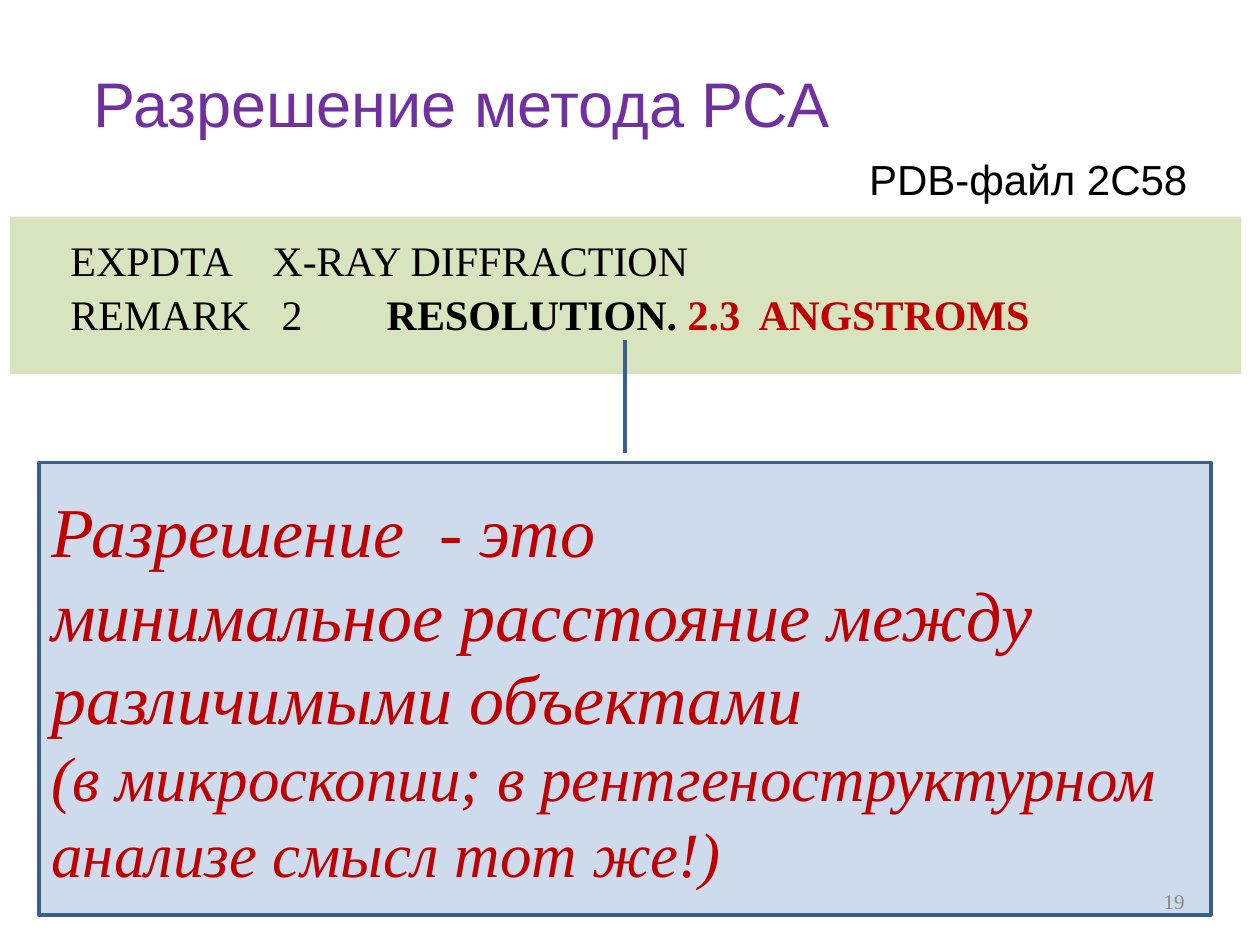
"""Build a slide that defines resolution in X-ray structure analysis."""
from lxml import etree
from pptx import Presentation
from pptx.dml.color import RGBColor
from pptx.enum.shapes import MSO_SHAPE
from pptx.enum.text import MSO_ANCHOR, PP_ALIGN
from pptx.oxml.ns import qn
from pptx.util import Inches, Pt

RECTANGLE, CALLOUT = MSO_SHAPE.RECTANGLE, MSO_SHAPE.LINE_CALLOUT_1
TOP, MIDDLE = MSO_ANCHOR.TOP, MSO_ANCHOR.MIDDLE
LEFT, RIGHT = PP_ALIGN.LEFT, PP_ALIGN.RIGHT

PURPLE = RGBColor(0x70, 0x30, 0xA0)
BLACK = RGBColor(0, 0, 0)
RED = RGBColor(0xC0, 0, 0)
GRAY = RGBColor(0x89, 0x89, 0x89)
GREEN = RGBColor(0xD7, 0xE4, 0xBD)
BLUE = RGBColor(0x4F, 0x81, 0xBD)
DARK_BLUE = RGBColor(0x3A, 0x5F, 0x8C)

SANS, SERIF = "Arial", "Times New Roman"
TITLE_FORMAT = {"name": SANS, "size": Pt(36), "color": PURPLE}
LABEL_FORMAT = {"name": SANS, "size": Pt(24), "color": BLACK}
RECORD_FORMAT = {"name": SERIF, "size": Pt(24), "color": BLACK}
KEY_FORMAT = {**RECORD_FORMAT, "bold": True}
VALUE_FORMAT = {**KEY_FORMAT, "color": RED}
TERM_FORMAT = {"name": SERIF, "size": Pt(40), "italic": True, "color": RED}
ASIDE_FORMAT = {**TERM_FORMAT, "size": Pt(36)}
NUMBER_FORMAT = {"name": SERIF, "size": Pt(12), "color": GRAY}

TITLE = [[("Разрешение метода РСА", TITLE_FORMAT)]]
LABEL = [[("PDB-файл 2С58", LABEL_FORMAT)]]
RECORDS = [
    [("EXPDTA    X-RAY DIFFRACTION", RECORD_FORMAT)],
    [("REMARK   2        ", RECORD_FORMAT), ("RESOLUTION. ", KEY_FORMAT),
     ("2.3  ANGSTROMS", VALUE_FORMAT)],
]
DEFINITION = [
    [("Разрешение  - это", TERM_FORMAT)],
    [("минимальное расстояние между различимыми объектами", TERM_FORMAT)],
    [("(в микроскопии; в рентгеноструктурном анализе смысл тот же!)", ASIDE_FORMAT)],
]
NUMBER = [[("19", NUMBER_FORMAT)]]

TITLE_BOX = (0.5, 0.3, 8.95, 1.03)
LABEL_BOX = (6.8, 1.17, 2.76, 0.51)
RECORDS_BOX = (0.08, 1.72, 9.77, 1.25)
DEFINITION_BOX = (0.31, 3.67, 9.3, 3.59)
NUMBER_BOX = (7.17, 6.95, 2.33, 0.4)
POINTER = (-0.02, 0.5, -0.27, 0.5)


def inches(box):
    return [Inches(length) for length in box]


def write(shape, paragraphs, anchor=TOP, align=LEFT, gap=0, **frame_format):
    frame = shape.text_frame
    for key, value in {"word_wrap": True, "vertical_anchor": anchor, **frame_format}.items():
        setattr(frame, key, value)
    for index, runs in enumerate(paragraphs):
        paragraph = frame.add_paragraph() if index else frame.paragraphs[0]
        paragraph.alignment = align
        paragraph.space_before = Pt(gap if index else 0)
        for text, run_format in runs:
            run = paragraph.add_run()
            run.text = text
            for key, value in run_format.items():
                if key == "color":
                    run.font.color.rgb = value
                else:
                    setattr(run.font, key, value)


def add_panel(slide, kind, box, color):
    shape = slide.shapes.add_shape(kind, *inches(box))
    shape.shadow.inherit = False
    shape.fill.solid()
    shape.fill.fore_color.rgb = color
    return shape


def main():
    presentation = Presentation()
    presentation.slide_width, presentation.slide_height = Inches(10), Inches(7.5)
    slide = presentation.slides.add_slide(presentation.slide_layouts[5])

    title = slide.shapes.title
    title.left, title.top, title.width, title.height = inches(TITLE_BOX)
    write(title, TITLE, anchor=MIDDLE, margin_left=Inches(0.24))

    records = add_panel(slide, RECTANGLE, RECORDS_BOX, GREEN)
    records.line.fill.background()
    write(records, RECORDS, gap=2, margin_left=Inches(0.48), margin_top=Inches(0.14))

    label = slide.shapes.add_textbox(*inches(LABEL_BOX))
    write(label, LABEL, word_wrap=False)

    definition = add_panel(slide, CALLOUT, DEFINITION_BOX, BLUE)
    color = definition.fill._xPr.find(".//" + qn("a:srgbClr"))
    etree.SubElement(color, qn("a:alpha"), val="28000")
    definition.line.color.rgb = DARK_BLUE
    definition.line.width = Pt(2)
    for index, share in enumerate(POINTER):
        definition.adjustments[index] = share
    write(definition, DEFINITION, anchor=MIDDLE)

    number = slide.shapes.add_textbox(*inches(NUMBER_BOX))
    write(number, NUMBER, anchor=MIDDLE, align=RIGHT)

    presentation.save("out.pptx")


if __name__ == "__main__":
    main()
